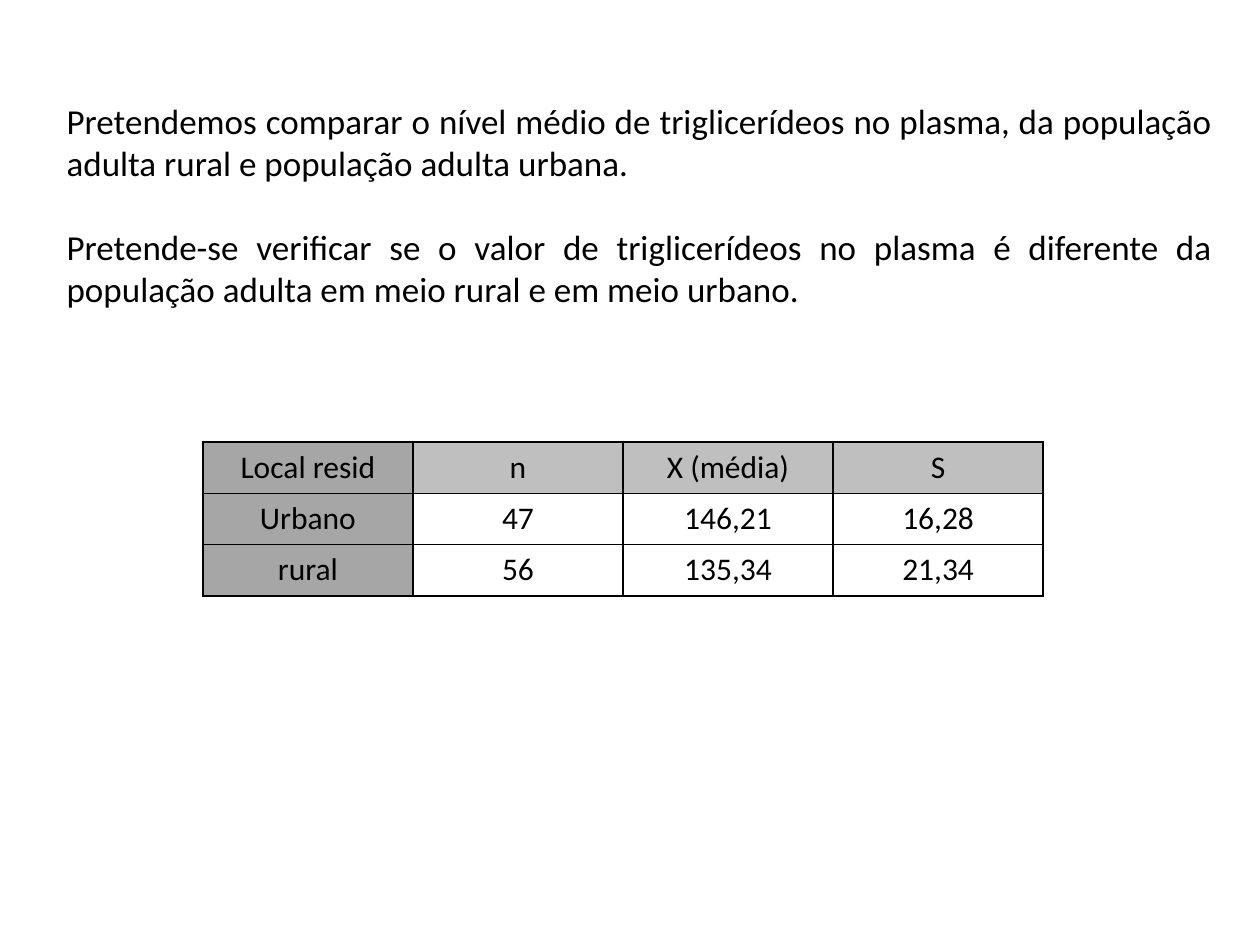
from dataclasses import dataclass

import pptx
import pptx.dml.color
import pptx.enum.text
import pptx.oxml
import pptx.oxml.ns
import pptx.util
from pptx.util import Inches

BLACK = pptx.dml.color.RGBColor(0x00, 0x00, 0x00)
HEADER_GRAY = pptx.dml.color.RGBColor(0xBF, 0xBF, 0xBF)
LABEL_GRAY = pptx.dml.color.RGBColor(0xA6, 0xA6, 0xA6)
ALIGN = pptx.enum.text.PP_ALIGN


@dataclass(frozen=True)
class Residence:
    place: str
    count: str
    mean: str
    deviation: str

    def values(self) -> tuple[str, ...]:
        return self.place, self.count, self.mean, self.deviation


QUESTIONS = (
    "Pretendemos comparar o nível médio de triglicerídeos no plasma, da população adulta rural e população adulta urbana.",
    "Pretende-se verificar se o valor de triglicerídeos no plasma é diferente da população adulta em meio rural e em meio urbano.",
)
RESIDENCES = (
    Residence("Local resid", "n", "X (média)", "S"),
    Residence("Urbano", "47", "146,21", "16,28"),
    Residence("rural", "56", "135,34", "21,34"),
)


def write(paragraph, text: str, *, size: float, align, before: float = 0) -> None:
    paragraph.alignment = align
    paragraph.space_before = pptx.util.Pt(before)
    run = paragraph.add_run()
    run.text = text
    run.font.name = "Calibri"
    run.font.size = pptx.util.Pt(size)
    run.font.bold = False
    run.font.color.rgb = BLACK


def add_borders(cell, color: pptx.dml.color.RGBColor, width: float) -> None:
    properties = cell._tc.get_or_add_tcPr()
    for side in "LRTB":
        properties.append(pptx.oxml.parse_xml(
            f'<a:ln{side} {pptx.oxml.ns.nsdecls("a")} w="{int(pptx.util.Pt(width))}">'
            f'<a:solidFill><a:srgbClr val="{color}"/></a:solidFill></a:ln{side}>'
        ))


def fill_cell(cell, row: int, column: int) -> None:
    if column == 0 or row == 0:
        cell.fill.solid()
        cell.fill.fore_color.rgb = LABEL_GRAY if column == 0 else HEADER_GRAY
    else:
        cell.fill.background()


def add_questions(slide) -> None:
    questions = slide.shapes.add_textbox(
        Inches(0.43), Inches(0.74), Inches(9.29), Inches(1.78)
    ).text_frame
    questions.word_wrap = True
    for index, question in enumerate(QUESTIONS):
        paragraph = questions.add_paragraph() if index else questions.paragraphs[0]
        write(paragraph, question, size=20, align=ALIGN.JUSTIFY, before=24 * index)


def add_residences(slide) -> None:
    columns = len(RESIDENCES[0].values())
    residences = slide.shapes.add_table(
        len(RESIDENCES), columns, Inches(1.61), Inches(3.51), Inches(6.67), Inches(1.22)
    ).table
    residences.first_row = False
    residences.horz_banding = False
    for row, residence in enumerate(RESIDENCES):
        for column, value in enumerate(residence.values()):
            cell = residences.cell(row, column)
            write(cell.text_frame.paragraphs[0], value, size=18, align=ALIGN.CENTER)
            add_borders(cell, BLACK, 1)
            fill_cell(cell, row, column)


def main() -> None:
    presentation = pptx.Presentation()
    presentation.slide_width = Inches(10)
    presentation.slide_height = Inches(7.5)
    slide = presentation.slides.add_slide(presentation.slide_layouts[6])
    add_questions(slide)
    add_residences(slide)
    presentation.save("out.pptx")


if __name__ == "__main__":
    main()
